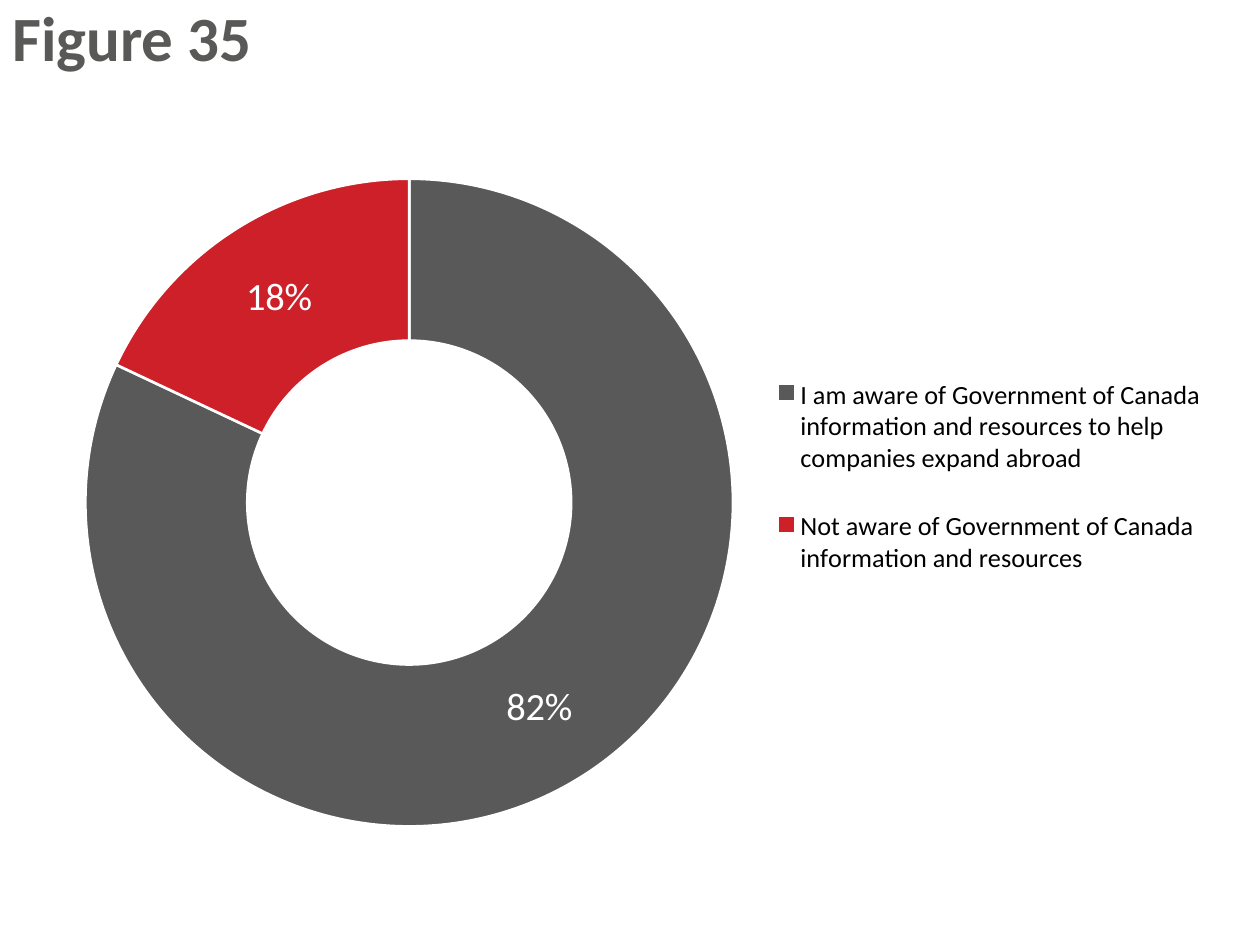
"""Build a slide with a doughnut chart of awareness of export resources."""
import typing

import pptx
import pptx.chart.data
import pptx.dml.color
import pptx.enum.chart
import pptx.enum.text
import pptx.oxml
import pptx.oxml.ns
import pptx.util

FACE = "Calibri"


class Slice(typing.NamedTuple):
    name: str
    share: float
    fill: str


class Box(typing.NamedTuple):
    left: float
    top: float
    width: float
    height: float


SLICES = [
    Slice("I am aware of Government of Canada information and resources "
          "to help companies expand abroad", 0.82, "595959"),
    Slice("Not aware of Government of Canada information and resources",
          0.18, "CE2029"),
]


def px(count: int) -> int:
    return round(count * 914400 / 126)


def tint(code: str) -> pptx.dml.color.RGBColor:
    return pptx.dml.color.RGBColor.from_string(code)


def style(font, size: int, code: str, bold: bool = False) -> None:
    font.name = FACE
    font.size = pptx.util.Pt(size)
    font.bold = bold
    font.color.rgb = tint(code)


def layout(box: Box, inner: bool = False):
    target = '<c:layoutTarget val="inner"/>' if inner else ""
    modes = "".join(f'<c:{key}Mode val="edge"/>' for key in "xy")
    sizes = "".join(f'<c:{key} val="{size}"/>' for key, size in zip("xywh", box))
    return pptx.oxml.parse_xml(
        f'<c:layout {pptx.oxml.ns.nsdecls("c")}><c:manualLayout>'
        f"{target}{modes}{sizes}</c:manualLayout></c:layout>")


def add_title(slide, box: Box, text: str) -> None:
    frame = slide.shapes.add_textbox(*map(px, box)).text_frame
    frame.word_wrap = True
    frame.vertical_anchor = pptx.enum.text.MSO_ANCHOR.MIDDLE
    line = frame.paragraphs[0]
    line.text = text
    line.line_spacing = 0.9
    style(line.font, 36, "595958", True)


def add_ring(slide, box: Box, slices: list[Slice]) -> None:
    data = pptx.chart.data.CategoryChartData(number_format="0%")
    data.categories = [part.name for part in slices]
    data.add_series("Series 1", [part.share for part in slices])
    chart = slide.shapes.add_chart(
        pptx.enum.chart.XL_CHART_TYPE.DOUGHNUT, *map(px, box), data).chart
    chart.has_title = False
    style(chart.font, 10, "000000")

    chart.has_legend = True
    chart.legend.position = pptx.enum.chart.XL_LEGEND_POSITION.RIGHT
    chart.legend.include_in_layout = False
    style(chart.legend.font, 15, "000000")

    plot = chart.plots[0]
    plot.vary_by_categories = True
    plot.has_data_labels = True
    labels = plot.data_labels
    labels.show_value = True
    labels.show_percentage = False
    labels.number_format = "0%"
    labels.number_format_is_linked = False
    style(labels.font, 22, "FFFFFF")

    for index, part in enumerate(slices):
        shape = plot.series[0].points[index].format
        shape.fill.solid()
        shape.fill.fore_color.rgb = tint(part.fill)
        shape.line.color.rgb = tint("FFFFFF")
        shape.line.width = pptx.util.Pt(1.5)

    root = chart.element
    for old in root.xpath(".//c:plotArea/c:layout | .//c:legend/c:layout"):
        old.getparent().remove(old)
    root.xpath(".//c:plotArea")[0].insert(
        0, layout(Box(0.052, 0.028, 0.552, 0.961), True))
    root.xpath(".//c:legendPos")[0].addnext(
        layout(Box(0.62, 0.27, 0.37, 0.4)))
    for hole in root.xpath(".//c:holeSize"):
        hole.set("val", "63")


def main() -> None:
    deck = pptx.Presentation()
    deck.slide_width, deck.slide_height = px(1260), px(945)
    slide = deck.slides.add_slide(deck.slide_layouts[6])
    add_title(slide, Box(0, 0, 1260, 83), "Figure 35")
    add_ring(slide, Box(10, 160, 1217, 674), SLICES)
    deck.save("out.pptx")


if __name__ == "__main__":
    main()
